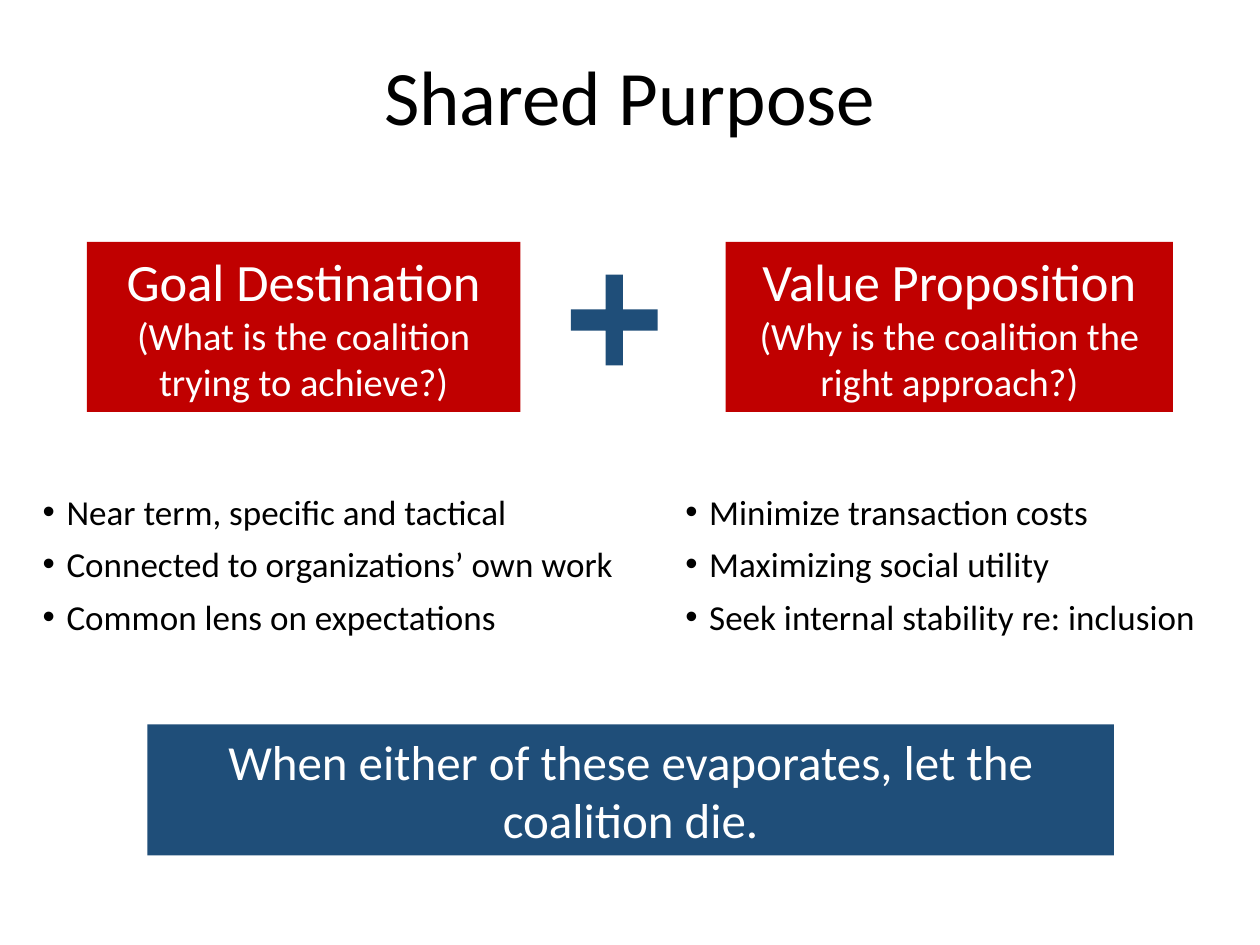
from lxml import etree
from pptx import Presentation, util as u
from pptx.dml.color import RGBColor
from pptx.enum import shapes, text
from pptx.oxml import ns

RED, BLUE, WHITE, BLACK = "C00000", "1F4E79", "FFFFFF", "000000"


def color(hex_code):
    """Turn a hex string into a colour."""
    return RGBColor.from_string(hex_code)


class PurposeSlide:
    """Holds the style and the slide, on a grid of 100 columns by 75 rows."""

    font = "Calibri"
    columns, rows = 100, 75

    def __init__(self, deck):
        """Add a blank slide to the deck."""
        self.slide = deck.slides.add_slide(deck.slide_layouts[6])
        self.cell_width = deck.slide_width / self.columns
        self.cell_height = deck.slide_height / self.rows

    def place(self, column, row, width, height):
        """Convert a grid area to slide lengths."""
        return (u.Emu(round(column * self.cell_width)), u.Emu(round(row * self.cell_height)),
                u.Emu(round(width * self.cell_width)), u.Emu(round(height * self.cell_height)))

    def fill_lines(self, frame, lines, ink, align):
        """Fill a frame with (wording, size) lines and return the paragraphs."""
        frame.word_wrap = True
        for index, (wording, size) in enumerate(lines):
            line = frame.add_paragraph() if index else frame.paragraphs[0]
            line.text = wording
            line.alignment = align
            line.font.name = self.font
            line.font.size = u.Pt(size)
            line.font.color.rgb = color(ink)
        return frame.paragraphs

    def heading(self, area, wording):
        """Add the slide heading."""
        frame = self.slide.shapes.add_textbox(*self.place(*area)).text_frame
        frame.vertical_anchor = text.MSO_ANCHOR.MIDDLE
        line, = self.fill_lines(frame, [(wording, 44)], BLACK, text.PP_ALIGN.CENTER)
        line.line_spacing = 0.9

    def solid(self, kind, area, fill):
        """Add a plain filled shape."""
        figure = self.slide.shapes.add_shape(kind, *self.place(*area))
        figure.shadow.inherit = False
        figure.fill.solid()
        figure.fill.fore_color.rgb = color(fill)
        figure.line.fill.background()
        return figure

    def panel(self, area, fill, lines):
        """Add a filled rectangle with centred white lines."""
        frame = self.solid(shapes.MSO_SHAPE.RECTANGLE, area, fill).text_frame
        frame.vertical_anchor = text.MSO_ANCHOR.MIDDLE
        self.fill_lines(frame, lines, WHITE, text.PP_ALIGN.CENTER)

    def plus(self, area):
        """Add the plus sign between the two halves."""
        self.solid(shapes.MSO_SHAPE.CROSS, area, BLUE).adjustments[0] = 0.4

    def bullets(self, area, points):
        """Add a bulleted list."""
        frame = self.slide.shapes.add_textbox(*self.place(*area)).text_frame
        lines = [(point, 20) for point in points]
        for line in self.fill_lines(frame, lines, BLACK, text.PP_ALIGN.LEFT):
            line.space_after = u.Pt(6)
            properties = line._p.get_or_add_pPr()
            indent = u.Inches(0.19)
            properties.set("marL", str(indent))
            properties.set("indent", str(-indent))
            etree.SubElement(properties, ns.qn("a:buFont"), typeface="Arial")
            etree.SubElement(properties, ns.qn("a:buChar"), char="•")
            properties.append(properties.find(ns.qn("a:defRPr")))


def main():
    """Build and save the deck."""
    deck = Presentation()
    deck.slide_width, deck.slide_height = u.Inches(10), u.Inches(7.5)
    purpose = PurposeSlide(deck)
    purpose.heading((6.9, 2.5, 86.2, 10.9), "Shared Purpose")

    halves = [
        (6.9, 34.4, "Goal Destination", "(What is the coalition trying to achieve?)",
         2.4, 47.6, ["Near term, specific and tactical",
                     "Connected to organizations’ own work",
                     "Common lens on expectations"]),
        (57.6, 35.5, "Value Proposition", "(Why is the coalition the right approach?)",
         53.4, 43.9, ["Minimize transaction costs",
                      "Maximizing social utility",
                      "Seek internal stability re: inclusion"]),
    ]
    for left, width, name, question, list_left, list_width, points in halves:
        purpose.panel((left, 19.2, width, 13.5), RED, [(name, 30), (question, 22)])
        purpose.bullets((list_left, 38.4, list_width, 12.8), points)

    purpose.plus((45.3, 21.8, 6.9, 7.2))
    purpose.panel((11.7, 57.5, 76.7, 10.4), BLUE,
                  [("When either of these evaporates, let the coalition die.", 28)])
    deck.save("out.pptx")


if __name__ == "__main__":
    main()
